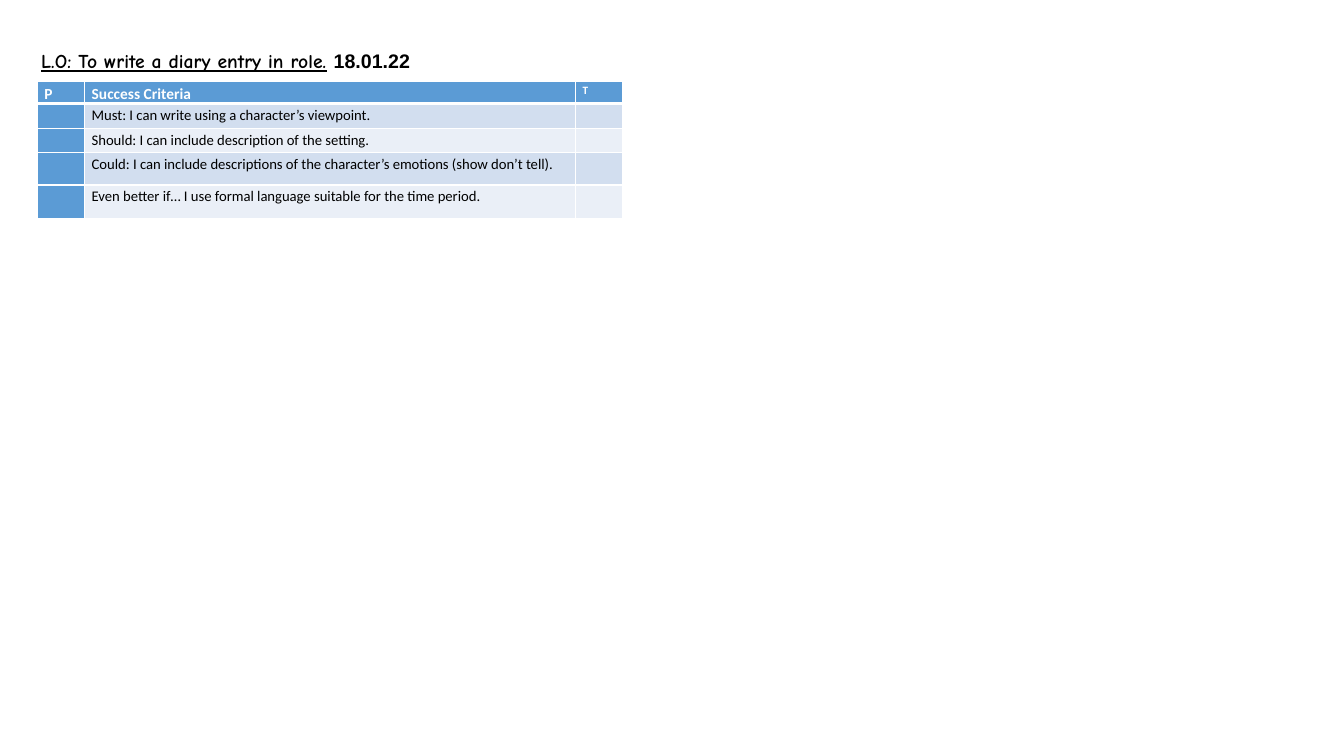
from dataclasses import dataclass

from lxml import etree
from pptx import Presentation
from pptx.dml.color import RGBColor
from pptx.enum.text import MSO_ANCHOR, MSO_AUTO_SIZE
from pptx.oxml.ns import qn
from pptx.util import Inches, Pt

MIDDLE = MSO_ANCHOR.MIDDLE
GROW = MSO_AUTO_SIZE.SHAPE_TO_FIT_TEXT

# Content
OBJECTIVE = "L.O: To write a diary entry in role."
DATE = "18.01.22"
HEADINGS = ["P", "Success Criteria", "T"]
CRITERIA = [
    "Must: I can write using a character’s viewpoint.",
    "Should: I can include description of the setting.",
    "Could: I can include descriptions of the character’s emotions (show don’t tell).",
    "Even better if… I use formal language suitable for the time period.",
]
SPACED_CRITERIA = 2  # the first criteria have space around the line

# Layout in inches
SLIDE = (13.33, 7.5)
TITLE_BOX = (0.31, 0.43, 4.52, 0.34)
TABLE_CORNER = (0.37, 0.81)
COLUMNS = [0.47, 4.87, 0.47]
ROWS = [0.18, 0.25, 0.24, 0.32, 0.33]
CELL_INSET = 0.07


@dataclass(frozen=True)
class Theme:
    title_font: str = "Comic Neue"
    date_font: str = "Arial"
    table_font: str = "Calibri"
    title_size: float = 14
    heading_size: float = 11
    small_heading_size: float = 8
    body_size: float = 10.5
    line_spacing: float = 1.15
    rule: float = 1
    heading_rule: float = 3
    ink: str = "000000"
    paper: str = "FFFFFF"
    accent: str = "5B9BD5"
    bands: tuple = ("D2DEEF", "EAEFF7")


THEME = Theme()


def style(font, name, size, color, bold):
    font.name, font.size, font.bold = name, Pt(size), bold
    font.color.rgb = RGBColor.from_string(color)


def add_title(page):
    box = page.shapes.add_textbox(*map(Inches, TITLE_BOX))
    frame = box.text_frame
    frame.word_wrap = False
    frame.auto_size = GROW
    frame.vertical_anchor = MIDDLE
    para = frame.paragraphs[0]
    parts = [(OBJECTIVE, THEME.title_font, True),
             (" ", THEME.title_font, False),
             (DATE, THEME.date_font, False)]
    for text, name, underline in parts:
        span = para.add_run()
        span.text = text
        style(span.font, name, THEME.title_size, THEME.ink, True)
        span.font.underline = underline


def add_borders(cell, row):
    top = THEME.heading_rule if row == 1 else THEME.rule
    bottom = THEME.heading_rule if row == 0 else THEME.rule
    widths = {"L": THEME.rule, "R": THEME.rule, "T": top, "B": bottom}
    properties = cell._tc.get_or_add_tcPr()
    for side, width in widths.items():
        line = etree.SubElement(properties, qn(f"a:ln{side}"), w=str(Pt(width)))
        fill = etree.SubElement(line, qn("a:solidFill"))
        etree.SubElement(fill, qn("a:srgbClr"), val=THEME.paper)


def fill_cell(cell, text, row, column):
    heading = row == 0
    add_borders(cell, row)
    cell.fill.solid()
    color = THEME.accent if heading or column == 0 else THEME.bands[(row - 1) % 2]
    cell.fill.fore_color.rgb = RGBColor.from_string(color)
    cell.margin_left = cell.margin_right = Inches(CELL_INSET)
    cell.margin_top = cell.margin_bottom = 0

    para = cell.text_frame.paragraphs[0]
    size = THEME.heading_size if heading else THEME.body_size
    if text == HEADINGS[-1]:
        size = THEME.small_heading_size
    if not text:
        # An empty cell takes its line height from the paragraph end
        etree.SubElement(para._p, qn("a:endParaRPr"), sz=str(int(size * 100)))
        return
    para.text = text
    para.line_spacing = THEME.line_spacing
    if 1 <= row <= SPACED_CRITERIA:
        para.space_before = para.space_after = Pt(2)
    style(para.font, THEME.table_font, size,
          THEME.paper if heading else THEME.ink, heading)


def add_criteria_table(page):
    size = (sum(COLUMNS), sum(ROWS))
    frame = page.shapes.add_table(len(ROWS), len(COLUMNS),
                                  *map(Inches, TABLE_CORNER + size))
    table = frame.table
    for column, width in zip(table.columns, COLUMNS):
        column.width = Inches(width)
    for row, height in zip(table.rows, ROWS):
        row.height = Inches(height)
    records = [HEADINGS] + [["", criterion, ""] for criterion in CRITERIA]
    for row, record in enumerate(records):
        for column, text in enumerate(record):
            fill_cell(table.cell(row, column), text, row, column)


def main():
    deck = Presentation()
    deck.slide_width, deck.slide_height = map(Inches, SLIDE)
    page = deck.slides.add_slide(deck.slide_layouts[6])
    add_criteria_table(page)
    add_title(page)
    deck.save("out.pptx")


if __name__ == "__main__":
    main()
